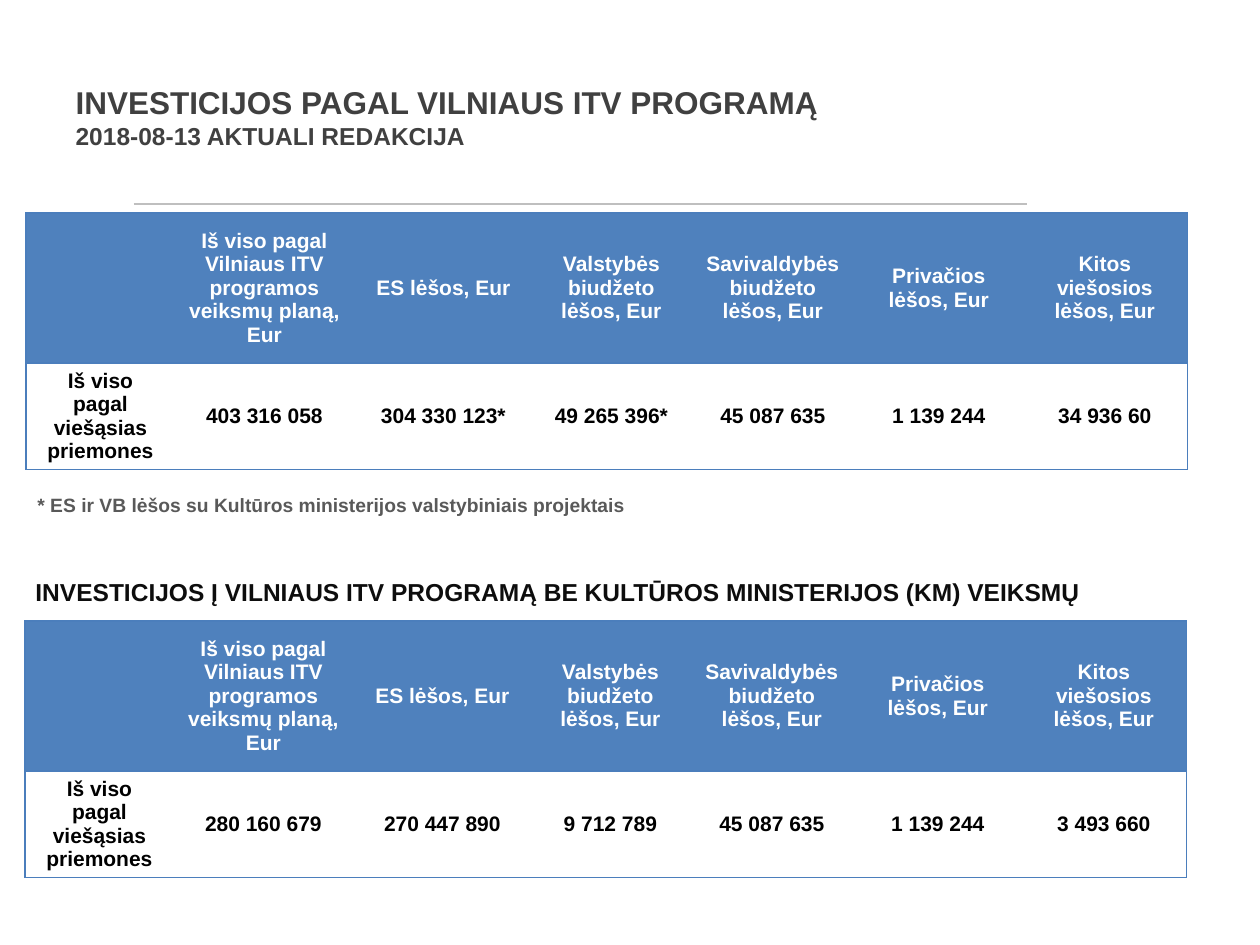
from dataclasses import dataclass

from lxml import etree
from pptx import Presentation
from pptx.dml.color import RGBColor
from pptx.enum.shapes import MSO_CONNECTOR
from pptx.enum.text import MSO_ANCHOR, MSO_AUTO_SIZE, PP_ALIGN
from pptx.oxml.ns import qn
from pptx.util import Emu, Pt

STRAIGHT = MSO_CONNECTOR.STRAIGHT
TOP, MIDDLE = MSO_ANCHOR.TOP, MSO_ANCHOR.MIDDLE
LEFT, CENTER = PP_ALIGN.LEFT, PP_ALIGN.CENTER
NO_FIT, GROW = MSO_AUTO_SIZE.NONE, MSO_AUTO_SIZE.SHAPE_TO_FIT_TEXT

PX_PER_INCH = 126
FONT = "Arial"
HEADER_FILL = "4F81BD"
BORDER = "4B7EBC"
COL_WIDTHS = (149, 179, 179, 157, 166, 166, 166)
ROW_HEIGHTS = (150, 100)
HEADERS = (
    "",
    "Iš viso pagal Vilniaus ITV programos veiksmų planą, Eur",
    "ES lėšos, Eur",
    "Valstybės biudžeto lėšos, Eur",
    "Savivaldybės biudžeto lėšos, Eur",
    "Privačios lėšos, Eur",
    "Kitos viešosios lėšos, Eur",
)
ROW_LABEL = "Iš viso pagal viešąsias priemones"


@dataclass
class FundTable:
    x: int
    y: int
    amounts: tuple[str, ...]


@dataclass
class Label:
    x: int
    y: int
    w: int
    h: int
    text: str
    size: int
    color: str
    anchor: MSO_ANCHOR
    fit: MSO_AUTO_SIZE


TABLES = (
    FundTable(26, 213, ("403 316 058", "304 330 123*", "49 265 396*",
                        "45 087 635", "1 139 244", "34 936 60")),
    FundTable(25, 621, ("280 160 679", "270 447 890", "9 712 789",
                        "45 087 635", "1 139 244", "3 493 660")),
)
LABELS = (
    Label(25, 485, 1134, 39,
          "* ES ir VB lėšos su Kultūros ministerijos valstybiniais projektais",
          11, "595959", MIDDLE, NO_FIT),
    Label(23, 571, 1143, 43,
          "INVESTICIJOS Į VILNIAUS ITV PROGRAMĄ BE KULTŪROS MINISTERIJOS (KM) VEIKSMŲ",
          14, "0D0D0D", TOP, GROW),
)


def px(n: int) -> Emu:
    return Emu(round(n * 914400 / PX_PER_INCH))


def rgb(color: str) -> RGBColor:
    return RGBColor.from_string(color)


def style_run(r, size: int, color: str) -> None:
    r.font.name = FONT
    r.font.size = Pt(size)
    r.font.bold = True
    r.font.color.rgb = rgb(color)


def place(sp, x: int, y: int, w: int, h: int) -> None:
    sp.left, sp.top, sp.width, sp.height = px(x), px(y), px(w), px(h)


def add_title(s) -> None:
    sp = s.shapes.title
    place(sp, 63, 38, 1134, 158)
    tf = sp.text_frame
    tf.text = "INVESTICIJOS PAGAL VILNIAUS ITV PROGRAMĄ\v2018-08-13 AKTUALI REDAKCIJA"
    tf.auto_size = NO_FIT
    tf.vertical_anchor = MIDDLE
    p = tf.paragraphs[0]
    p.alignment = LEFT
    for r, size in zip(p.runs, (18, 14)):
        style_run(r, size, "404040")


def add_rule(s) -> None:
    line = s.shapes.add_connector(STRAIGHT, px(134), px(204), px(1027), px(204))
    line.line.color.rgb = rgb("BFBFBF")
    line.line.width = Pt(1.5)
    etree.SubElement(line._element.spPr, qn("a:effectLst"))


def add_label(s, label: Label) -> None:
    sp = s.shapes.add_textbox(px(label.x), px(label.y), px(label.w), px(label.h))
    tf = sp.text_frame
    tf.word_wrap = True
    tf.auto_size = label.fit
    tf.vertical_anchor = label.anchor
    tf.text = label.text
    style_run(tf.paragraphs[0].runs[0], label.size, label.color)


def set_borders(cell, visible: dict[str, bool]) -> None:
    tcPr = cell._tc.get_or_add_tcPr()
    for side, shown in visible.items():
        ln = etree.SubElement(tcPr, qn(f"a:ln{side}"), w=str(Pt(0.75)))
        if shown:
            fill = etree.SubElement(ln, qn("a:solidFill"))
            etree.SubElement(fill, qn("a:srgbClr"), val=BORDER)
        else:
            etree.SubElement(ln, qn("a:noFill"))


def add_fund_table(s, fund: FundTable) -> None:
    rows = (HEADERS, (ROW_LABEL, *fund.amounts))
    frame = s.shapes.add_table(len(rows), len(HEADERS), px(fund.x), px(fund.y),
                               px(sum(COL_WIDTHS)), px(sum(ROW_HEIGHTS)))
    table = frame.table
    table.horz_banding = False
    for col, width in zip(table.columns, COL_WIDTHS):
        col.width = px(width)
    for row, height in zip(table.rows, ROW_HEIGHTS):
        row.height = px(height)
    for i, texts in enumerate(rows):
        for j, text in enumerate(texts):
            cell = table.cell(i, j)
            set_borders(cell, {"L": j == 0, "R": j == len(texts) - 1,
                               "T": True, "B": True})
            if i == 0:
                cell.fill.solid()
                cell.fill.fore_color.rgb = rgb(HEADER_FILL)
            else:
                cell.fill.background()
            cell.vertical_anchor = TOP if i and j == 0 else MIDDLE
            if text:
                cell.text_frame.text = text
                p = cell.text_frame.paragraphs[0]
                p.alignment = CENTER
                style_run(p.runs[0], 12, "000000" if i else "FFFFFF")


def main() -> None:
    prs = Presentation()
    prs.slide_width, prs.slide_height = px(1260), px(945)
    s = prs.slides.add_slide(prs.slide_layouts[5])
    add_title(s)
    add_rule(s)
    for fund in TABLES:
        add_fund_table(s, fund)
    for label in LABELS:
        add_label(s, label)
    prs.save("out.pptx")


if __name__ == "__main__":
    main()
